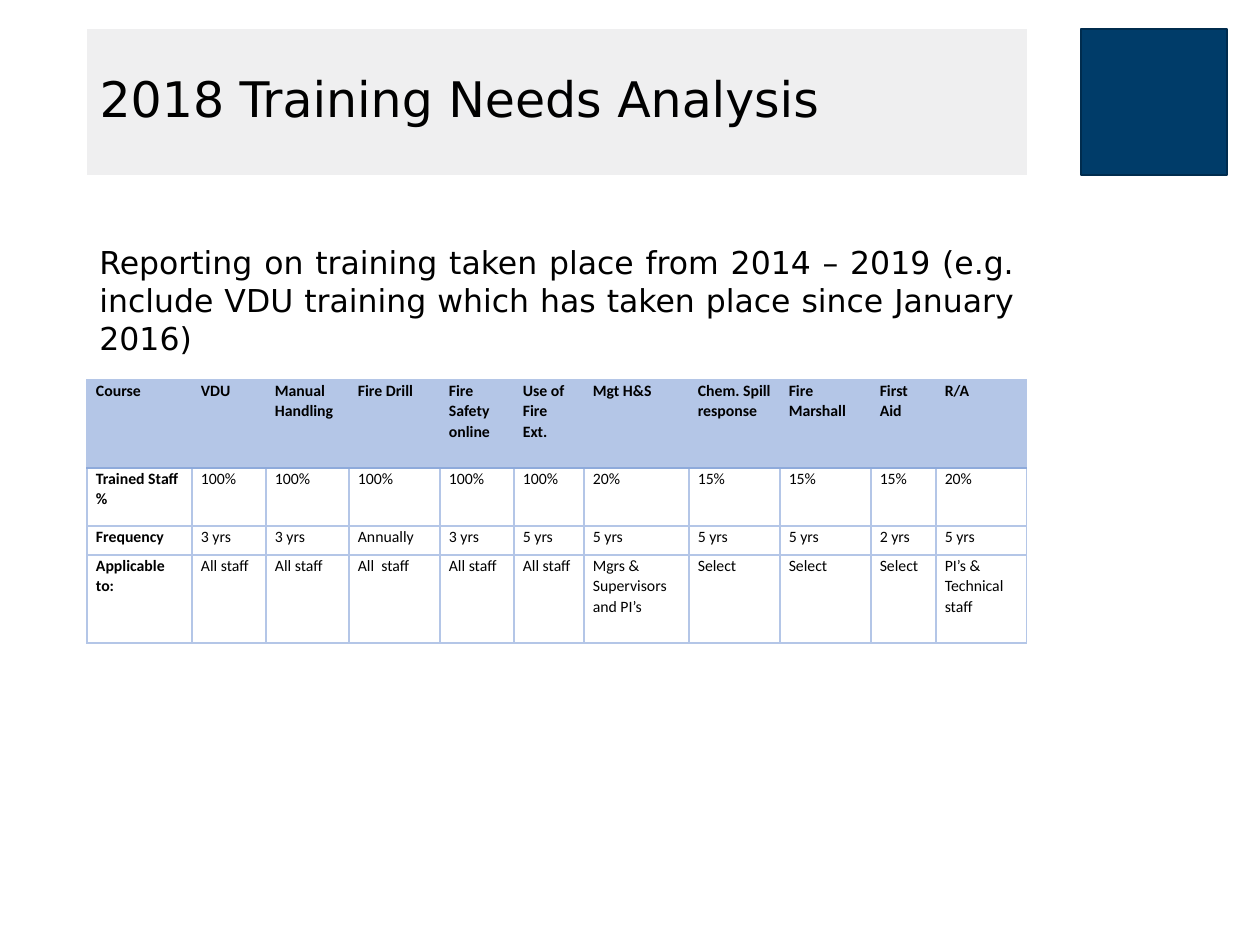
from lxml.etree import SubElement
from pptx import Presentation
from pptx.dml.color import RGBColor
from pptx.enum.shapes import MSO_SHAPE
from pptx.enum.text import MSO_ANCHOR, PP_ALIGN
from pptx.oxml.ns import qn
from pptx.util import Emu, Pt

TITLE = "2018 Training Needs Analysis"
INTRO = (
    "Reporting on training taken place from 2014 – 2019 (e.g. include VDU "
    "training which has taken place since January 2016)"
)
COURSES = [
    ("Course", "Trained Staff %", "Frequency", "Applicable to:"),
    ("VDU", "100%", "3 yrs", "All staff"),
    ("Manual Handling", "100%", "3 yrs", "All staff"),
    ("Fire Drill", "100%", "Annually", "All  staff"),
    ("Fire Safety online", "100%", "3 yrs", "All staff"),
    ("Use of Fire Ext.", "100%", "5 yrs", "All staff"),
    ("Mgt H&S", "20%", "5 yrs", "Mgrs & Supervisors and PI’s"),
    ("Chem. Spill response", "15%", "5 yrs", "Select"),
    ("Fire Marshall", "15%", "5 yrs", "Select"),
    ("First Aid", "15%", "2 yrs", "Select"),
    ("R/A", "20%", "5 yrs", "PI’s & Technical staff"),
]
COLUMN_WIDTHS = [105, 74, 83, 91, 74, 70, 105, 91, 91, 65, 91]
ROW_HEIGHTS = [88, 58, 29, 88]

BLACK = RGBColor(0x00, 0x00, 0x00)
NAVY = RGBColor(0x00, 0x3C, 0x69)
DARK_NAVY = RGBColor(0x00, 0x2C, 0x4E)
PALE_GREY = RGBColor(0xEF, 0xEF, 0xF0)
PALE_BLUE = RGBColor(0xB4, 0xC6, 0xE7)
MID_BLUE = RGBColor(0x8E, 0xAA, 0xDB)

LEFT, TOP, WIDTH, BAND = 87, 29, 940, 146


def px(length):
    return Emu(length * 7257)


def box(*lengths):
    return [px(length) for length in lengths]


def style(paragraph, font_name, size, bold=False):
    font = paragraph.font
    font.name, font.size, font.bold = font_name, Pt(size), bold
    font.color.rgb = BLACK


def add_border(cell, side, color, width):
    line = SubElement(cell._tc.get_or_add_tcPr(), qn(f"a:ln{side}"), w=str(Pt(width)))
    fill = SubElement(line, qn("a:solidFill"))
    SubElement(fill, qn("a:srgbClr"), val=str(color))


def format_cell(cell, row, column):
    cell.margin_left = cell.margin_right = px(9)
    cell.margin_top = cell.margin_bottom = 0
    header_edge = {0: "B", 1: "T"}.get(row)
    for side in "LRTB":
        if side == header_edge:
            add_border(cell, side, MID_BLUE, 1.5)
        else:
            add_border(cell, side, PALE_BLUE, 1)
    if row == 0:
        cell.fill.solid()
        cell.fill.fore_color.rgb = PALE_BLUE
    else:
        cell.fill.background()
    paragraph = cell.text_frame.paragraphs[0]
    paragraph.line_spacing = 1.07
    style(paragraph, "Calibri", 9, bold=row == 0 or column == 0)


deck = Presentation()
deck.slide_width, deck.slide_height = px(1260), px(945)
slide = deck.slides.add_slide(deck.slide_layouts[5])
shapes = slide.shapes

square = shapes.add_shape(MSO_SHAPE.RECTANGLE, *box(1081, TOP, BAND, BAND))
square.shadow.inherit = False
square.fill.solid()
square.fill.fore_color.rgb = NAVY
square.line.color.rgb = DARK_NAVY
square.line.width = Pt(1)

title = shapes.title
title.left, title.top, title.width, title.height = box(LEFT, TOP, WIDTH, BAND)
title.fill.solid()
title.fill.fore_color.rgb = PALE_GREY
title.text_frame.text = TITLE
title.text_frame.vertical_anchor = MSO_ANCHOR.MIDDLE
heading = title.text_frame.paragraphs[0]
heading.alignment = PP_ALIGN.LEFT
heading.line_spacing = 0.9
style(heading, "DejaVu Sans", 28)

intro = shapes.add_textbox(*box(LEFT, 237, WIDTH, 471)).text_frame
intro.word_wrap = True
intro.text = INTRO
intro.paragraphs[0].alignment = PP_ALIGN.JUSTIFY
style(intro.paragraphs[0], "DejaVu Sans", 18)

training = shapes.add_table(
    len(ROW_HEIGHTS), len(COURSES), *box(LEFT, 380, WIDTH, sum(ROW_HEIGHTS))
).table
training.first_row = training.horz_banding = False
for table_row, height in zip(training.rows, ROW_HEIGHTS):
    table_row.height = px(height)
for column, (course, width) in enumerate(zip(COURSES, COLUMN_WIDTHS)):
    training.columns[column].width = px(width)
    for row, entry in enumerate(course):
        cell = training.cell(row, column)
        cell.text = entry
        format_cell(cell, row, column)

deck.save("out.pptx")
